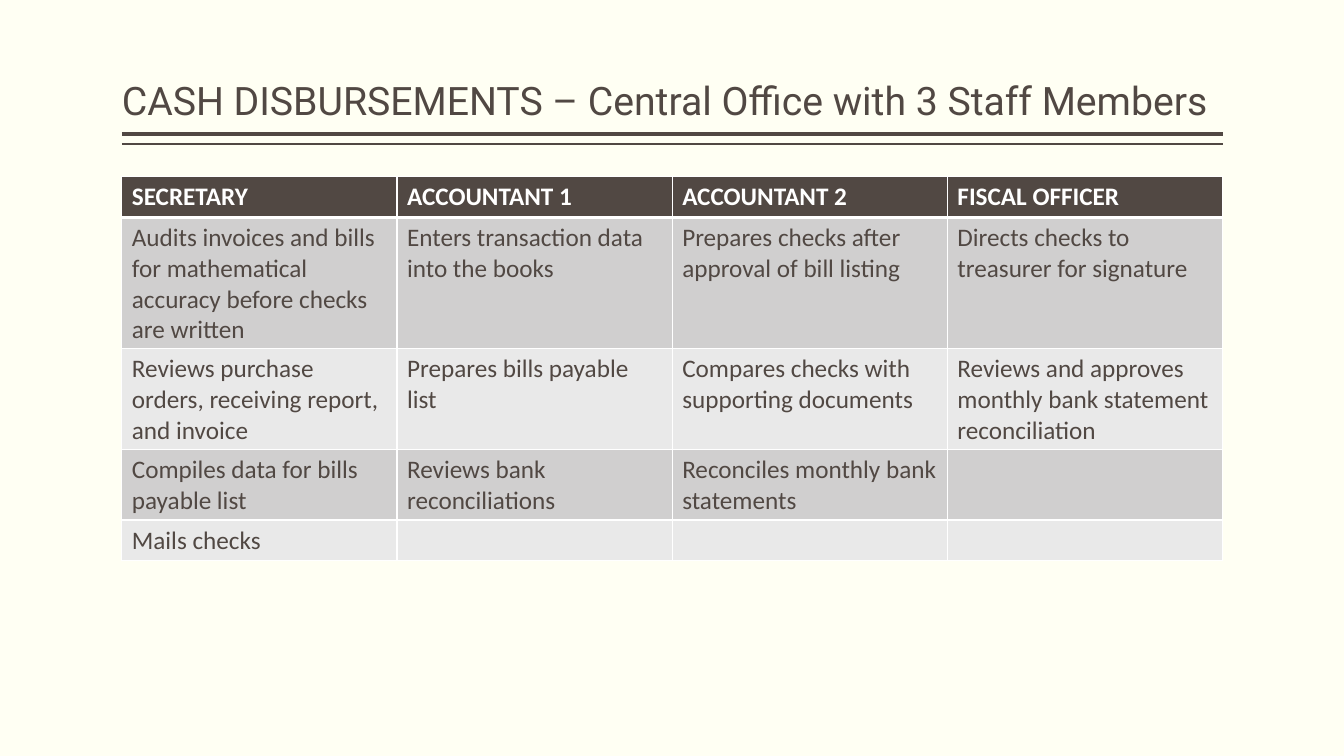
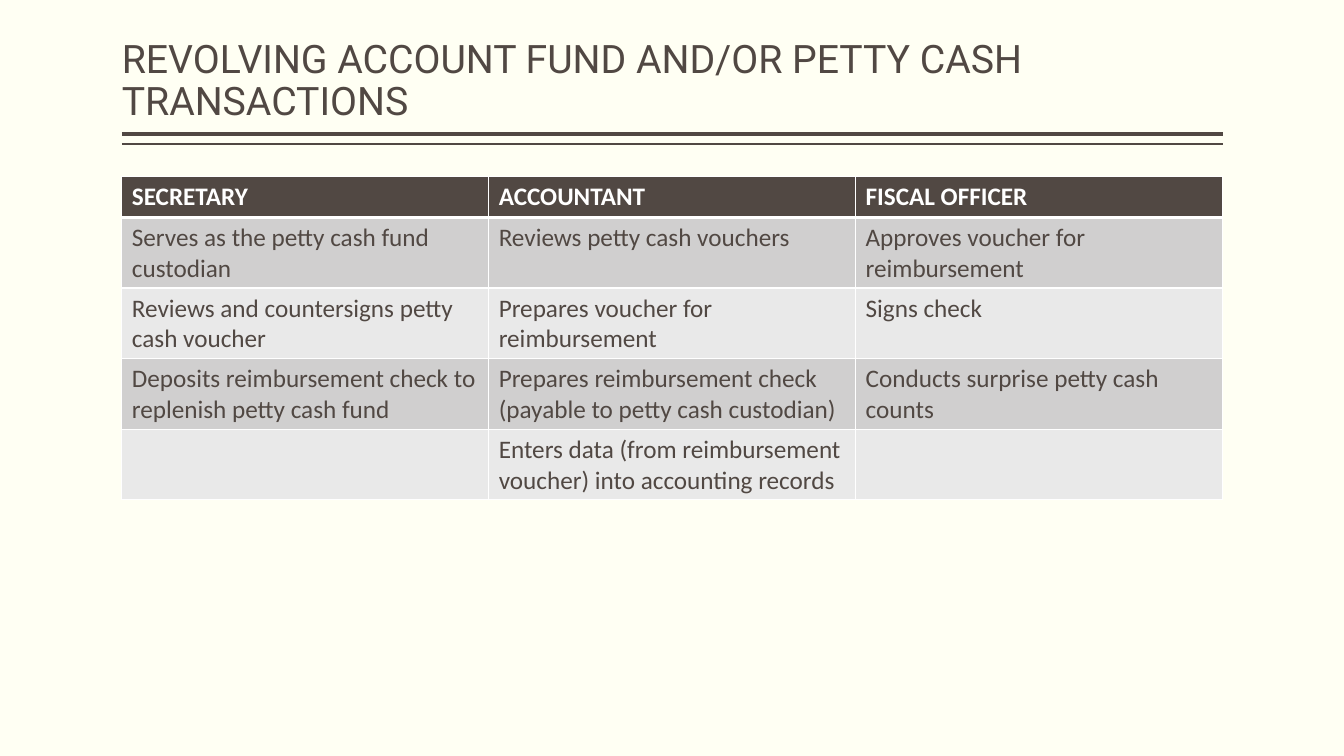
from dataclasses import dataclass

from lxml.etree import SubElement
from pptx import Presentation
from pptx.dml.color import RGBColor
from pptx.enum.shapes import MSO_CONNECTOR
from pptx.enum.text import MSO_ANCHOR
from pptx.oxml.ns import qn
from pptx.util import Cm, Pt

COLORS = {
    "page": "FFFFF3",
    "dark": "514843",
    "white": "FFFFFF",
    "odd": "D0CFCF",
    "even": "E9E9E9",
}
TITLE_FONT, BODY_FONT = "Roboto", "Calibri"
LEFT, WIDTH = 3.07, 27.74
TITLE_TOP, TITLE_HEIGHT = 0.2, 3.05
TABLE_TOP, ROW_HEIGHT = 4.45, 1.03
THIN, THICK = 1, 3


@dataclass(frozen=True)
class Rule:
    top: float
    weight: float


@dataclass(frozen=True)
class DutySlide:
    title: str
    roles: tuple[str, ...]
    duties: tuple[tuple[str, ...], ...]


TITLE_RULES = (Rule(3.38, THICK), Rule(3.63, THIN))

DUTY_SLIDES = (
    DutySlide(
        "CASH DISBURSEMENTS – Central Office with 3 Staff Members",
        ("SECRETARY", "ACCOUNTANT 1", "ACCOUNTANT 2", "FISCAL OFFICER"),
        (
            ("Audits invoices and bills for mathematical accuracy before checks are written",
             "Enters transaction data into the books",
             "Prepares checks after approval of bill listing",
             "Directs checks to treasurer for signature"),
            ("Reviews purchase orders, receiving report, and invoice",
             "Prepares bills payable list",
             "Compares checks with supporting documents",
             "Reviews and approves monthly bank statement reconciliation"),
            ("Compiles data for bills payable list",
             "Reviews bank reconciliations",
             "Reconciles monthly bank statements",
             ""),
            ("Mails checks", "", "", ""),
        ),
    ),
    DutySlide(
        "REVOLVING ACCOUNT FUND AND/OR PETTY CASH TRANSACTIONS",
        ("SECRETARY", "ACCOUNTANT", "FISCAL OFFICER"),
        (
            ("Serves as the petty cash fund custodian",
             "Reviews petty cash vouchers",
             "Approves voucher for reimbursement"),
            ("Reviews and countersigns petty cash voucher",
             "Prepares voucher for reimbursement",
             "Signs check"),
            ("Deposits reimbursement check to replenish petty cash fund",
             "Prepares reimbursement check (payable to petty cash custodian)",
             "Conducts surprise petty cash counts"),
            ("",
             "Enters data (from reimbursement voucher) into accounting records",
             ""),
        ),
    ),
)


def rgb(name: str) -> RGBColor:
    return RGBColor.from_string(COLORS[name])


def write_text(frame, text: str, *, font: str = BODY_FONT, size: float = 18,
               color: str = "dark", bold: bool = False, spacing: float = 1.0) -> None:
    paragraph = frame.paragraphs[0]
    paragraph.line_spacing = spacing
    if not text:
        paragraph.font.size = Pt(size)
        return
    run = paragraph.add_run()
    run.text = text
    run.font.name = font
    run.font.size = Pt(size)
    run.font.bold = bold
    run.font.color.rgb = rgb(color)


def add_title(slide, text: str) -> None:
    title = slide.shapes.add_textbox(Cm(LEFT), Cm(TITLE_TOP), Cm(WIDTH), Cm(TITLE_HEIGHT))
    frame = title.text_frame
    frame.word_wrap = True
    frame.vertical_anchor = MSO_ANCHOR.BOTTOM
    frame.margin_left = frame.margin_right = 0
    write_text(frame, text, font=TITLE_FONT, size=28, spacing=0.9)


def add_rule(slide, rule: Rule) -> None:
    line = slide.shapes.add_connector(
        MSO_CONNECTOR.STRAIGHT, Cm(LEFT), Cm(rule.top), Cm(LEFT + WIDTH), Cm(rule.top))
    line.line.color.rgb = rgb("dark")
    line.line.width = Pt(rule.weight)
    SubElement(line._element.spPr, qn("a:effectLst"))


def set_borders(cell, top: float, bottom: float) -> None:
    """Give the cell white borders; call before filling it, as the schema orders them."""
    properties = cell._tc.get_or_add_tcPr()
    for side, weight in (("L", THIN), ("R", THIN), ("T", top), ("B", bottom)):
        border = SubElement(properties, qn(f"a:ln{side}"), w=str(Pt(weight)))
        fill = SubElement(border, qn("a:solidFill"))
        SubElement(fill, qn("a:srgbClr"), val=COLORS["white"])


def add_duty_table(slide, content: DutySlide) -> None:
    rows = (content.roles, *content.duties)
    table = slide.shapes.add_table(
        len(rows), len(content.roles), Cm(LEFT), Cm(TABLE_TOP),
        Cm(WIDTH), Cm(ROW_HEIGHT * len(rows))).table
    table.horz_banding = False
    for row_index, texts in enumerate(rows):
        header = row_index == 0
        band = "dark" if header else "odd" if row_index % 2 else "even"
        for column_index, text in enumerate(texts):
            cell = table.cell(row_index, column_index)
            set_borders(cell, top=THICK if row_index == 1 else THIN,
                        bottom=THICK if header else THIN)
            cell.fill.solid()
            cell.fill.fore_color.rgb = rgb(band)
            write_text(cell.text_frame, text, bold=header,
                       color="white" if header else "dark")


def main() -> None:
    deck = Presentation()
    deck.slide_width, deck.slide_height = Cm(33.87), Cm(19.05)
    page = deck.slide_master.background.fill
    page.solid()
    page.fore_color.rgb = rgb("page")
    blank = deck.slide_layouts[6]
    for content in DUTY_SLIDES:
        slide = deck.slides.add_slide(blank)
        for rule in TITLE_RULES:
            add_rule(slide, rule)
        add_title(slide, content.title)
        add_duty_table(slide, content)
    deck.save("out.pptx")


if __name__ == "__main__":
    main()
